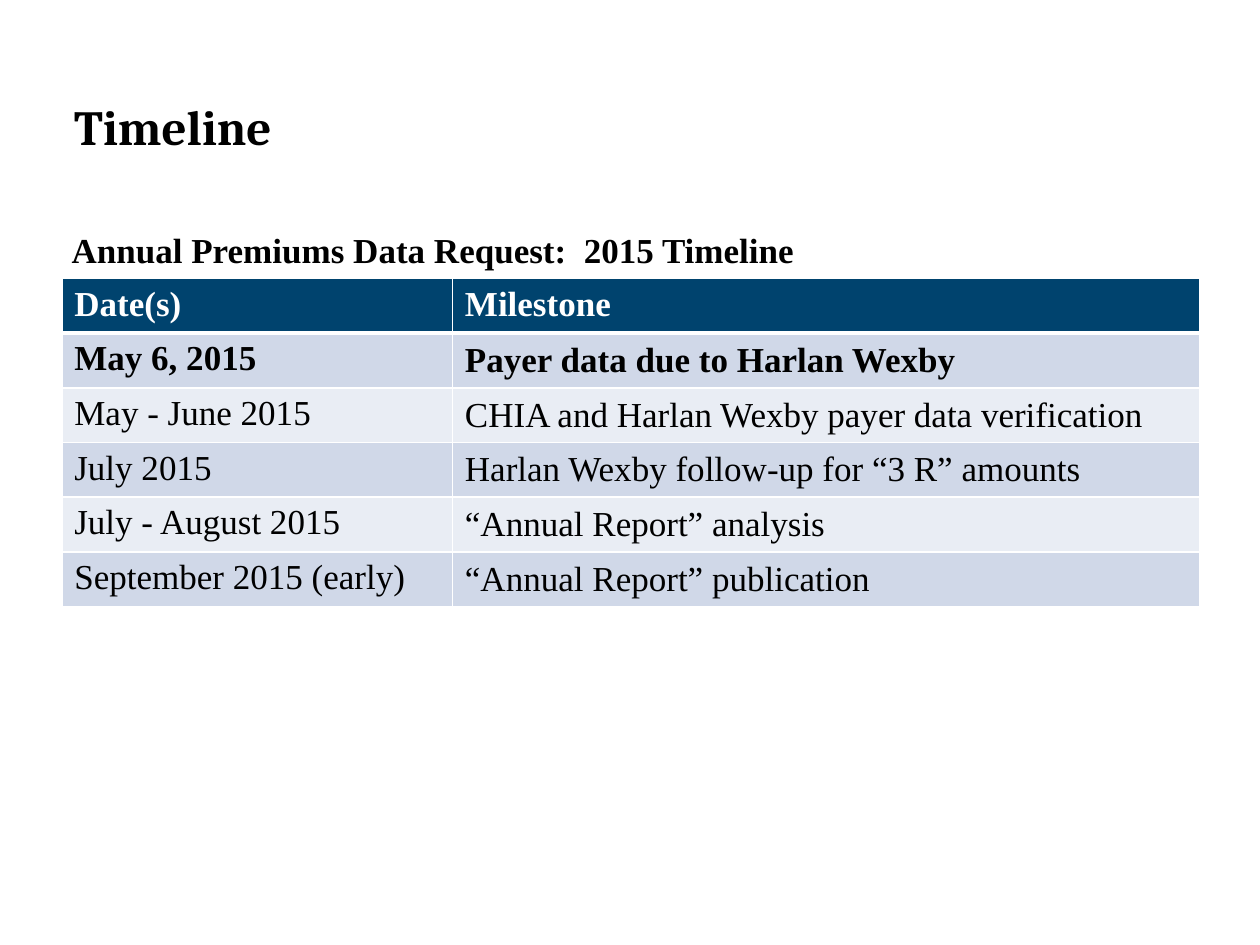
from dataclasses import dataclass

from lxml.etree import SubElement
from pptx import Presentation
from pptx.dml.color import RGBColor
from pptx.enum.text import MSO_ANCHOR
from pptx.oxml.ns import qn
from pptx.util import Inches, Pt


@dataclass(frozen=True)
class Theme:
    heading_font: str = "Cambria"
    body_font: str = "Times New Roman"
    title_size: int = 28
    body_size: int = 20
    text: str = "000000"
    white: str = "FFFFFF"
    header: str = "00436E"
    bands: tuple = ("D0D8E8", "E9EDF4")


THEME = Theme()
COLUMN_WIDTHS = (3.1, 5.93)
ROW_HEIGHT = 0.43
MILESTONES = [
    ("Date(s)", "Milestone"),
    ("May 6, 2015", "Payer data due to Harlan Wexby"),
    ("May - June 2015", "CHIA and Harlan Wexby payer data verification"),
    ("July 2015", "Harlan Wexby follow-up for “3 R” amounts"),
    ("July - August 2015", "“Annual Report” analysis"),
    ("September 2015 (early)", "“Annual Report” publication"),
]


def add_run(p, text, font, size, color, bold):
    r = p.add_run()
    r.text = text
    r.font.name = font
    r.font.size = Pt(size)
    r.font.bold = bold
    r.font.color.rgb = RGBColor.from_string(color)


def add_text(s, box, text, font, size, anchor, top_inset=0.05):
    tf = s.shapes.add_textbox(*map(Inches, box)).text_frame
    tf.word_wrap = True
    tf.vertical_anchor = anchor
    tf.margin_top = Inches(top_inset)
    add_run(tf.paragraphs[0], text, font, size, THEME.text, True)


def set_borders(cell, top, bottom):
    # Borders come before the fill in the cell properties
    tc_pr = cell._tc.get_or_add_tcPr()
    widths = {"a:lnL": 1, "a:lnR": 1, "a:lnT": top, "a:lnB": bottom}
    for tag, width in widths.items():
        ln = SubElement(tc_pr, qn(tag), w=str(Pt(width)))
        fill = SubElement(ln, qn("a:solidFill"))
        SubElement(fill, qn("a:srgbClr"), val=THEME.white)


def add_timeline(s, left, top):
    size = (sum(COLUMN_WIDTHS), ROW_HEIGHT * len(MILESTONES))
    table = s.shapes.add_table(
        len(MILESTONES), len(COLUMN_WIDTHS), *map(Inches, (left, top, *size))
    ).table
    for column, width in zip(table.columns, COLUMN_WIDTHS):
        column.width = Inches(width)

    for i, texts in enumerate(MILESTONES):
        table.rows[i].height = Inches(ROW_HEIGHT)
        is_header = i == 0
        fill = THEME.header if is_header else THEME.bands[(i - 1) % 2]
        color = THEME.white if is_header else THEME.text
        for j, text in enumerate(texts):
            cell = table.cell(i, j)
            set_borders(cell, top=3 if i == 1 else 1, bottom=3 if is_header else 1)
            cell.fill.solid()
            cell.fill.fore_color.rgb = RGBColor.from_string(fill)
            if j == 1 and not is_header:
                cell.vertical_anchor = MSO_ANCHOR.MIDDLE
            # The header and the first deadline are bold
            add_run(cell.text_frame.paragraphs[0], text, THEME.body_font,
                    THEME.body_size, color, i < 2)


def main():
    prs = Presentation()
    prs.slide_width, prs.slide_height = Inches(10), Inches(7.5)
    s = prs.slides.add_slide(prs.slide_layouts[6])

    # Title and table heading
    add_text(s, (0.49, 0.65, 8.79, 0.7), "Timeline",
             THEME.heading_font, THEME.title_size, MSO_ANCHOR.MIDDLE)
    add_text(s, (0.47, 1.72, 8.79, 0.49),
             "Annual Premiums Data Request:  2015 Timeline",
             THEME.body_font, THEME.body_size, MSO_ANCHOR.TOP, top_inset=0.09)

    # Milestone table
    add_timeline(s, 0.49, 2.21)

    prs.save("out.pptx")


if __name__ == "__main__":
    main()
